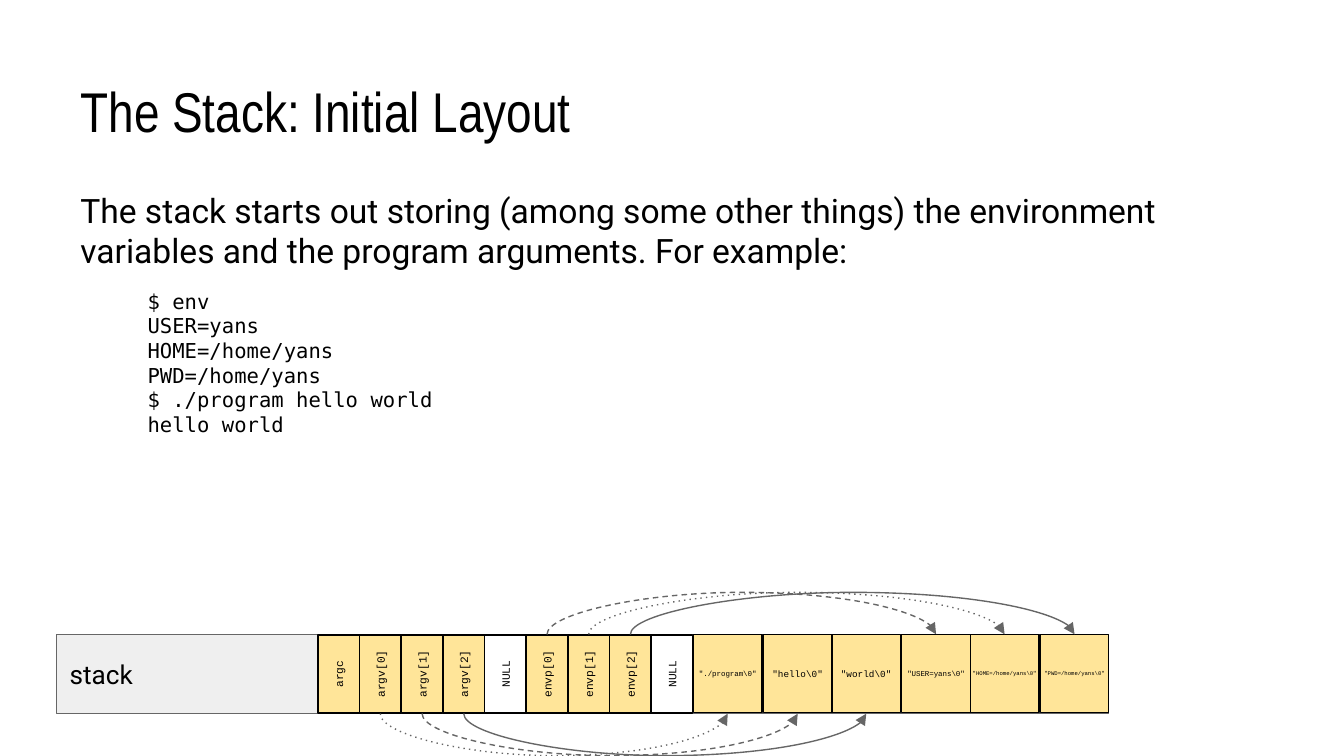
from lxml import etree
from pptx import Presentation
from pptx import util as u
from pptx.dml.color import RGBColor
from pptx.enum import shapes, text
from pptx.oxml.ns import qn

PX = 9144  # EMU in one px, 100 px to the inch
SLIDE_W = 1000
BLACK, GRAY, PALE, WHITE, YELLOW = "000000", "666666", "EFEFEF", "FFFFFF", "FFE599"

# Stack row, left to right
POINTERS = ["argc", "argv[0]", "argv[1]", "argv[2]", "NULL",
            "envp[0]", "envp[1]", "envp[2]", "NULL"]
STRINGS = [('"./program\\0"', 4), ('"hello\\0"', 5), ('"world\\0"', 5),
           ('"USER=yans\\0"', 4), ('"HOME=/home/yans\\0"', 3), ('"PWD=/home/yans\\0"', 3)]
ROW_TOP, ROW_BOTTOM, CELL_H = 472, 531, 58
POINTER_X, POINTER_W = 252, 31  # centre of the first pointer cell, pitch
STRING_X, STRING_W, STRING_PITCH = 516, 51, 51.6

# Pointer index, string index, dash, whether the arc runs above the row
ARCS = [(7, 5, "solid", True), (6, 4, "dot", True), (5, 3, "dash", True),
        (3, 2, "solid", False), (2, 1, "dash", False), (1, 0, "dot", False)]
ARC_DEPTH = 600         # EMU, nearly flat because both ends are level
ARC_BULGE = 39787500    # bulge relative to the depth, in 1/100000

CODE = ["$ env", "USER=yans", "HOME=/home/yans", "PWD=/home/yans",
        "$ ./program hello world", "hello world"]


def px(value):
    return u.Emu(round(value * PX))


def color(value):
    return RGBColor.from_string(value)


def apply(target, **values):
    for key, value in values.items():
        setattr(target, key, value)


def place(shape, left, top, width, height):
    apply(shape, left=px(left), top=px(top), width=px(width), height=px(height))


def frame_format(frame, inset, anchor):
    apply(frame, word_wrap=True, auto_size=text.MSO_AUTO_SIZE.NONE,
          vertical_anchor=anchor, margin_left=px(inset), margin_right=px(inset),
          margin_top=px(inset), margin_bottom=px(inset))


def write(paragraph, words, size, font, align=text.PP_ALIGN.LEFT):
    run = paragraph.add_run()
    run.text = words
    apply(run.font, size=u.Pt(size), name=font)
    run.font.color.rgb = color(BLACK)
    paragraph.alignment = align


def box(slide, area, fill, line, inset=0):
    rect = slide.shapes.add_shape(shapes.MSO_SHAPE.RECTANGLE, *map(px, area))
    rect.shadow.inherit = False
    rect.fill.solid()
    rect.fill.fore_color.rgb = color(fill)
    rect.line.color.rgb = color(line)
    rect.line.width = u.Pt(0.75)
    frame_format(rect.text_frame, inset, text.MSO_ANCHOR.MIDDLE)
    return rect


def cell(slide, area, words, size, fill=YELLOW, rotation=0):
    rect = box(slide, area, fill, BLACK)
    rect.rotation = rotation
    write(rect.text_frame.paragraphs[0], words, size, "Courier New", text.PP_ALIGN.CENTER)


def pointer_center(index):
    return POINTER_X + POINTER_W * index


def string_left(index):
    return round(STRING_X + STRING_PITCH * index)


def arc(slide, start, end, dash, above):
    """Curved arrow between two level points, drawn upright and turned 270 degrees."""
    y = px(ROW_TOP if above else ROW_BOTTOM)
    middle, half = px((start + end) / 2), px((end - start) / 2)
    offset = ARC_DEPTH // 2 * (1 if above else -1)
    curve = slide.shapes.add_connector(shapes.MSO_CONNECTOR.CURVE, middle - offset,
                                       y - half, middle + offset, y + half)
    curve.line.color.rgb = color(GRAY)
    curve.line.width = u.Pt(0.75)
    properties = curve._element.spPr
    properties.find(qn("a:xfrm")).set("rot", "16200000")
    guides = properties.find(qn("a:prstGeom")).get_or_add_avLst()
    etree.SubElement(guides, qn("a:gd"), name="adj1", fmla=f"val {ARC_BULGE}")
    outline = properties.find(qn("a:ln"))
    etree.SubElement(outline, qn("a:prstDash"), val=dash)
    etree.SubElement(outline, qn("a:tailEnd"), type="triangle")
    etree.SubElement(properties, qn("a:effectLst"))


def add_title(slide):
    title = slide.shapes.title
    place(title, 50, 23, 900, 94)
    frame_format(title.text_frame, 10, text.MSO_ANCHOR.BOTTOM)
    write(title.text_frame.paragraphs[0], "The Stack: Initial Layout", 30, "Arial Narrow")


def add_body(slide):
    body = slide.shapes.add_textbox(*map(px, (50, 131, 900, 299))).text_frame
    frame_format(body, 10, text.MSO_ANCHOR.TOP)
    write(body.paragraphs[0], "The stack starts out storing (among some other things) the "
          "environment variables and the program arguments. For example:", 18, "Roboto")
    for index, line in enumerate(CODE):
        paragraph = body.add_paragraph()
        paragraph.space_before = u.Pt(0 if index else 10)
        paragraph._p.get_or_add_pPr().set("marL", str(px(50)))
        write(paragraph, line, 11, "DejaVu Sans Mono")


def add_stack(slide):
    stack = box(slide, (42, ROW_TOP, 783, 59), PALE, GRAY, inset=10)
    write(stack.text_frame.paragraphs[0], "stack", 14, "Roboto")
    for index, name in enumerate(POINTERS):
        area = (pointer_center(index) - CELL_H / 2, 486, CELL_H, POINTER_W)
        cell(slide, area, name, 6, WHITE if name == "NULL" else YELLOW, 270)
    for index, (value, size) in enumerate(STRINGS):
        cell(slide, (string_left(index), ROW_TOP, STRING_W, CELL_H), value, size)
    for pointer, string, dash, above in ARCS:
        arc(slide, pointer_center(pointer), string_left(string) + STRING_W / 2, dash, above)


def main():
    deck = Presentation()
    # Widescreen, 16 to 9
    apply(deck, slide_width=px(SLIDE_W), slide_height=px(SLIDE_W * 9 / 16))
    slide = deck.slides.add_slide(deck.slide_layouts[5])
    add_title(slide)
    add_body(slide)
    add_stack(slide)
    deck.save("out.pptx")


if __name__ == "__main__":
    main()
